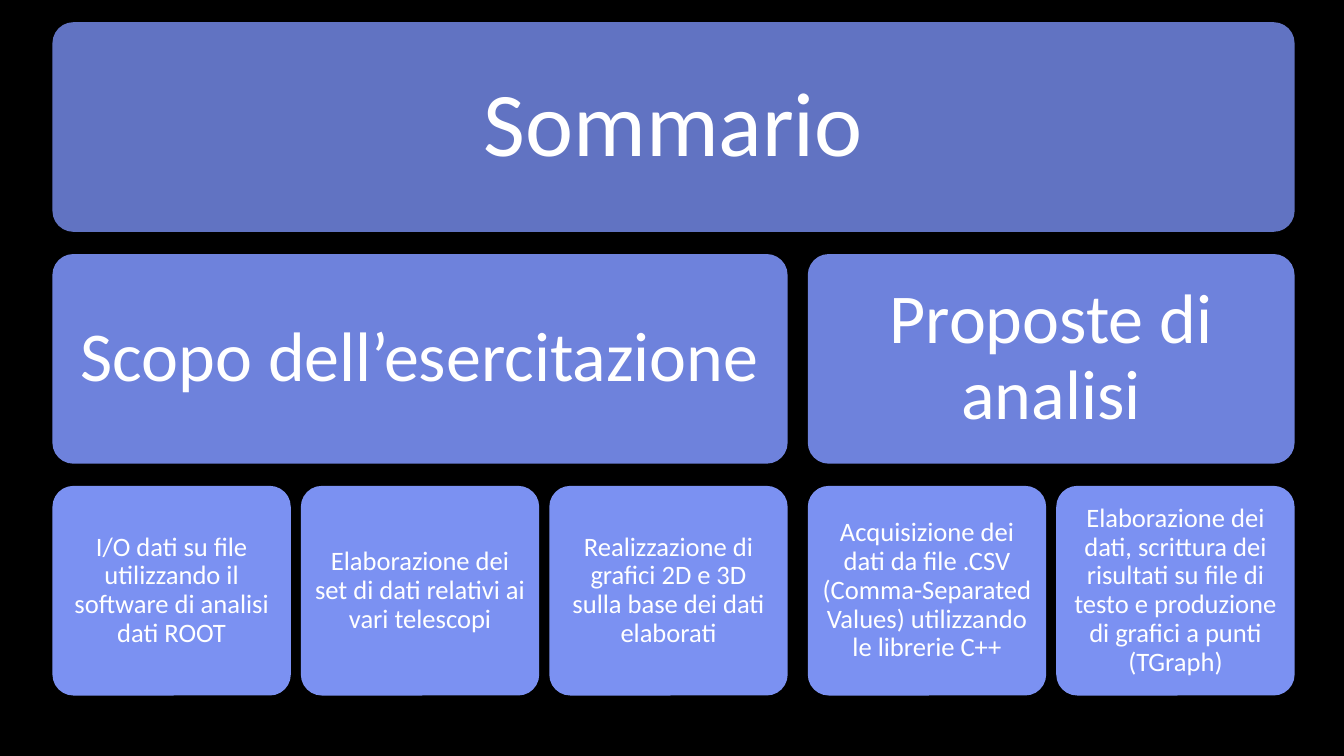
from pptx import Presentation
from pptx.dml.color import RGBColor
from pptx.enum.shapes import MSO_SHAPE
from pptx.enum.text import MSO_ANCHOR, MSO_AUTO_SIZE, PP_ALIGN
from pptx.util import Inches, Pt

# Grid: five columns in two groups, three rows (inches)
LEFT, TOP, FULL = 0.52, 0.22, 12.32
GAP, SPLIT, GROUP = 0.1, 0.2, 3
HIGH, STEP = 2.08, 2.3
WIDE = (FULL - SPLIT - 3 * GAP) / 5

# Per row: fill, text size, text inset
LEVELS = [("6173C2", 65, 0.27), ("6E82DC", 50, 0.21), ("7B91F2", 19, 0.08)]

TITLE = "Sommario"
TOPICS = [
    ("Scopo dell’esercitazione", [
        "I/O dati su file utilizzando il software di analisi dati ROOT",
        "Elaborazione dei set di dati relativi ai vari telescopi",
        "Realizzazione di grafici 2D e 3D sulla base dei dati elaborati",
    ]),
    ("Proposte di analisi", [
        "Acquisizione dei dati da file .CSV (Comma-Separated Values) "
        "utilizzando le librerie C++",
        "Elaborazione dei dati, scrittura dei risultati su file di testo "
        "e produzione di grafici a punti (TGraph)",
    ]),
]


def color(code):
    return RGBColor.from_string(code)


class Board:
    font, ink, back = "Calibri", "FFFFFF", "000000"

    def __init__(self, deck):
        self.slide = deck.slides.add_slide(deck.slide_layouts[5])
        fill = self.slide.background.fill
        fill.solid()
        fill.fore_color.rgb = color(self.back)

    def area(self, row, col, span):
        """Place of a block that covers some columns of a row."""
        def edge(c):
            return LEFT + c * (WIDE + GAP) + (SPLIT - GAP) * (c >= GROUP)
        width = edge(col + span - 1) + WIDE - edge(col)
        return [Inches(v) for v in (edge(col), TOP + row * STEP, width, HIGH)]

    def label(self, shape, text, row, pad=0):
        size, inset = LEVELS[row][1:]
        frame = shape.text_frame
        frame.text = text
        frame.word_wrap = True
        frame.auto_size = MSO_AUTO_SIZE.NONE
        frame.vertical_anchor = MSO_ANCHOR.MIDDLE
        frame.margin_left = frame.margin_right = Inches(inset + pad)
        frame.margin_top = frame.margin_bottom = Inches(inset + pad)
        line = frame.paragraphs[0]
        line.alignment = PP_ALIGN.CENTER
        line.line_spacing = 0.9
        font = line.runs[0].font
        font.name, font.size = self.font, Pt(size)
        font.color.rgb = color(self.ink)

    def block(self, row, col, span, text=None):
        box = self.slide.shapes.add_shape(
            MSO_SHAPE.ROUNDED_RECTANGLE, *self.area(row, col, span))
        box.adjustments[0] = 0.1
        box.shadow.inherit = False
        box.fill.solid()
        box.fill.fore_color.rgb = color(LEVELS[row][0])
        box.line.fill.background()
        if text:
            self.label(box, text, row)

    def title(self, text):
        self.block(0, 0, 5)
        head = self.slide.shapes.title
        head.left, head.top, head.width, head.height = self.area(0, 0, 5)
        self.label(head, text, 0, pad=0.06)
        # Bring the title in front of its block
        head.element.getparent().append(head.element)


def main():
    deck = Presentation()
    deck.slide_width, deck.slide_height = Inches(13.33), Inches(7.5)
    board = Board(deck)

    # Title row
    board.title(TITLE)

    # Topics, each above its own points
    col = 0
    for topic, points in TOPICS:
        board.block(1, col, len(points), topic)
        for point in points:
            board.block(2, col, 1, point)
            col += 1

    deck.save("out.pptx")


if __name__ == "__main__":
    main()
